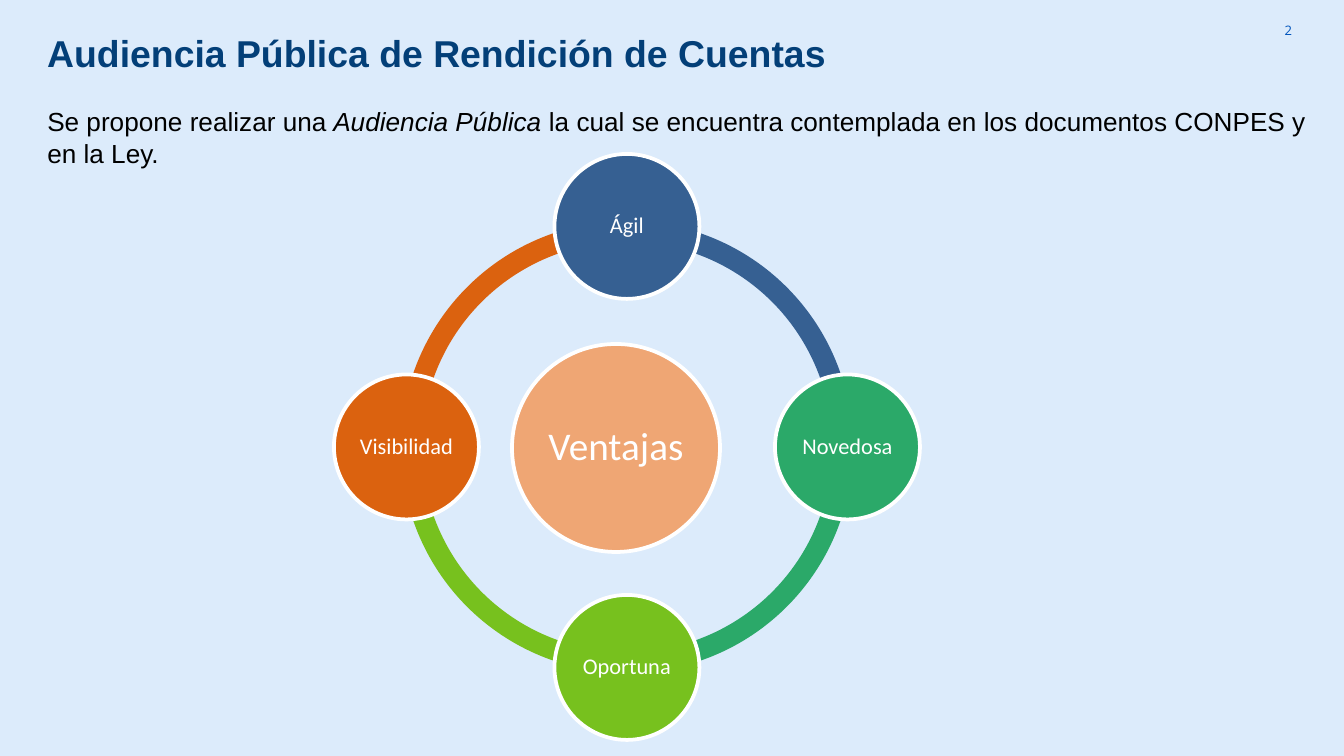
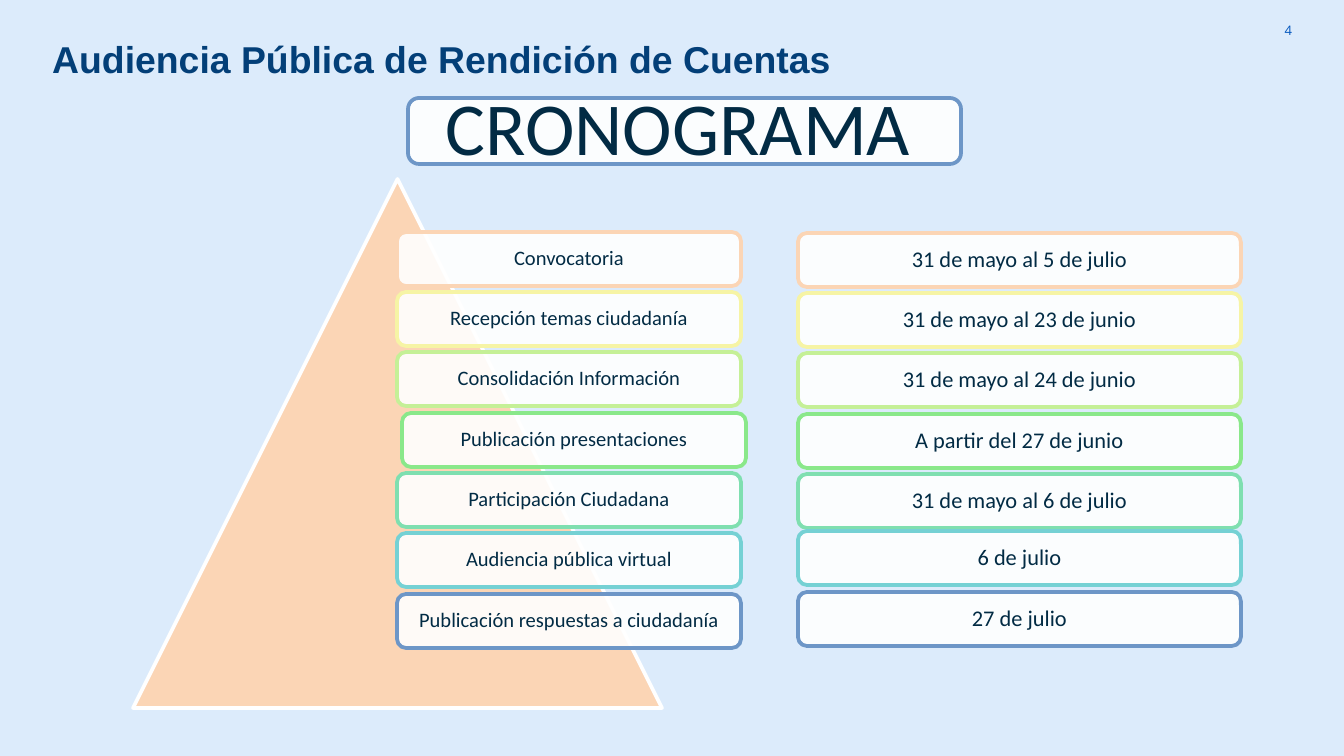
from dataclasses import dataclass
from math import cos, radians, sin

from lxml import etree
from pptx import Presentation
from pptx.dml.color import RGBColor
from pptx.enum.shapes import MSO_SHAPE
from pptx.enum.text import MSO_ANCHOR, PP_ALIGN
from pptx.oxml.ns import qn
from pptx.util import Pt

ARC, CIRCLE = MSO_SHAPE.BLOCK_ARC, MSO_SHAPE.OVAL
PANEL, TRIANGLE = MSO_SHAPE.ROUNDED_RECTANGLE, MSO_SHAPE.ISOSCELES_TRIANGLE
TOP, MIDDLE = MSO_ANCHOR.TOP, MSO_ANCHOR.MIDDLE
LEFT, CENTER, RIGHT = PP_ALIGN.LEFT, PP_ALIGN.CENTER, PP_ALIGN.RIGHT
PX = 914400 / 134.4


@dataclass(frozen=True)
class Theme:
    background: str = "DCEBFB"
    title: str = "033F78"
    number: str = "0054BC"
    body: str = "000000"
    ink: str = "022B44"
    white: str = "FFFFFF"
    hub: str = "EFA674"
    peach: str = "FBD5B5"
    steel: str = "6D96C7"
    heading_font: str = "Arial"
    label_font: str = "Calibri"
    number_font: str = "Open Sans"
    number_size: int = 7
    title_size: int = 20
    body_size: int = 14
    hub_size: int = 21
    banner_size: int = 40
    step_size: int = 11
    label_size: int = 12


theme = Theme()


def write(box, text, font, size, color, align=CENTER, anchor=MIDDLE, margins=None):
    frame = box.text_frame
    frame.word_wrap = True
    frame.vertical_anchor = anchor
    if margins:
        (frame.margin_left, frame.margin_top,
         frame.margin_right, frame.margin_bottom) = [round(m * PX) for m in margins]
    para = frame.paragraphs[0]
    para.text = text
    para.alignment = align
    if align == CENTER:
        para.line_spacing = 0.9
    para.font.name = font
    para.font.size = Pt(size)
    para.font.color.rgb = RGBColor.from_string(color)
    return para


def draw(page, kind, bounds, fill, line=None, opacity=100):
    shape = page.shapes.add_shape(kind, *[round(value * PX) for value in bounds])
    shape.shadow.inherit = False
    shape.fill.solid()
    shape.fill.fore_color.rgb = RGBColor.from_string(fill)
    if opacity < 100:
        color = shape.fill._xPr.find(qn("a:solidFill"))[0]
        etree.SubElement(color, qn("a:alpha")).set("val", str(opacity * 1000))
    if line:
        shape.line.color.rgb = RGBColor.from_string(line)
        shape.line.width = Pt(2)
    else:
        shape.line.fill.background()
    return shape


deck = Presentation()
deck.slide_width = round(1344 * PX)
deck.slide_height = round(756 * PX)

pages = []
for number, title_left, title_top in [("2", 34, 24), ("4", 39, 30)]:
    page = deck.slides.add_slide(deck.slide_layouts[6])
    page.background.fill.solid()
    page.background.fill.fore_color.rgb = RGBColor.from_string(theme.background)
    box = page.shapes.add_textbox(*[round(v * PX) for v in (1224, 1, 81, 58)])
    write(box, number, theme.number_font, theme.number_size, theme.number,
          RIGHT, margins=(13, 13, 13, 13))
    box = page.shapes.add_textbox(*[round(v * PX) for v in (title_left, title_top, 981, 103)])
    para = write(box, "Audiencia Pública de Rendición de Cuentas", theme.heading_font,
                 theme.title_size, theme.title, LEFT, TOP)
    para.font.bold = True
    pages.append(page)

benefits_page, schedule_page = pages

box = benefits_page.shapes.add_textbox(*[round(v * PX) for v in (34, 99, 1289, 77)])
para = write(box, "Se propone realizar una", theme.heading_font, theme.body_size,
             theme.body, LEFT, TOP)
span = para.add_run()
span.text = " Audiencia Pública "
span.font.italic = True
span = para.add_run()
span.text = "la cual se encuentra contemplada en los documentos CONPES y en la Ley."

benefits = [
    ("Ágil", "366092"),
    ("Novedosa", "2BA969"),
    ("Oportuna", "77C11E"),
    ("Visibilidad", "DB620F"),
]
center_x, center_y = 627, 447
ring, orbit, node, hub = 452, 220.5, 145, 208

for index, (label, color) in enumerate(benefits):
    start = (270 + 90 * index) % 360
    arc = draw(benefits_page, ARC,
               (center_x - ring / 2, center_y - ring / 2, ring, ring), color)
    arc.adjustments[0] = start * 0.6
    arc.adjustments[1] = (start + 90) % 360 * 0.6
    arc.adjustments[2] = 0.046

circle = draw(benefits_page, CIRCLE, (512, 344, hub, hub), theme.hub, theme.white)
write(circle, "Ventajas", theme.label_font, theme.hub_size, theme.white, margins=(4, 4, 4, 4))

for index, (label, color) in enumerate(benefits):
    angle = radians(270 + 90 * index)
    left = center_x + orbit * cos(angle) - node / 2
    top = center_y + orbit * sin(angle) - node / 2
    circle = draw(benefits_page, CIRCLE, (left, top, node, node), color, theme.white)
    write(circle, label, theme.label_font, theme.label_size, theme.white, margins=(3, 3, 3, 3))

banner = draw(schedule_page, PANEL, (408, 98, 553, 66), theme.white, theme.steel, 90)
write(banner, "CRONOGRAMA", theme.label_font, theme.banner_size, theme.ink,
      margins=(9, 9, 22, 9))
draw(schedule_page, TRIANGLE, (133, 179, 529, 529), theme.peach, theme.white)

steps = [
    ("Convocatoria", "31 de mayo al 5 de julio", theme.peach, 0, 0),
    ("Recepción temas ciudadanía", "31 de mayo al 23 de junio", "F6F4A5", 0, 0),
    ("Consolidación Información", "31 de mayo al 24 de junio", "C5F097", 0, 0),
    ("Publicación presentaciones", "A partir del 27 de junio", "8AE88A", 5, 0),
    ("Participación Ciudadana", "31 de mayo al 6 de julio", "7FDFB0", 0, 0),
    ("Audiencia pública virtual", "6 de julio", "75D1D4", 0, -3),
    ("Publicación respuestas a ciudadanía", "27 de julio", theme.steel, 0, -3),
]
for row, (step, date, color, step_shift, date_shift) in enumerate(steps):
    top = 232 + row * 181 // 3
    panel = draw(schedule_page, PANEL, (397 + step_shift, top, 344, 54), theme.white, color, 90)
    write(panel, step, theme.label_font, theme.step_size, theme.ink, margins=(7, 7, 7, 7))
    panel = draw(schedule_page, PANEL, (798, top + 1 + date_shift, 443, 54),
                 theme.white, color, 90)
    write(panel, date, theme.label_font, theme.label_size, theme.ink, margins=(9, 9, 9, 9))

deck.save("out.pptx")
